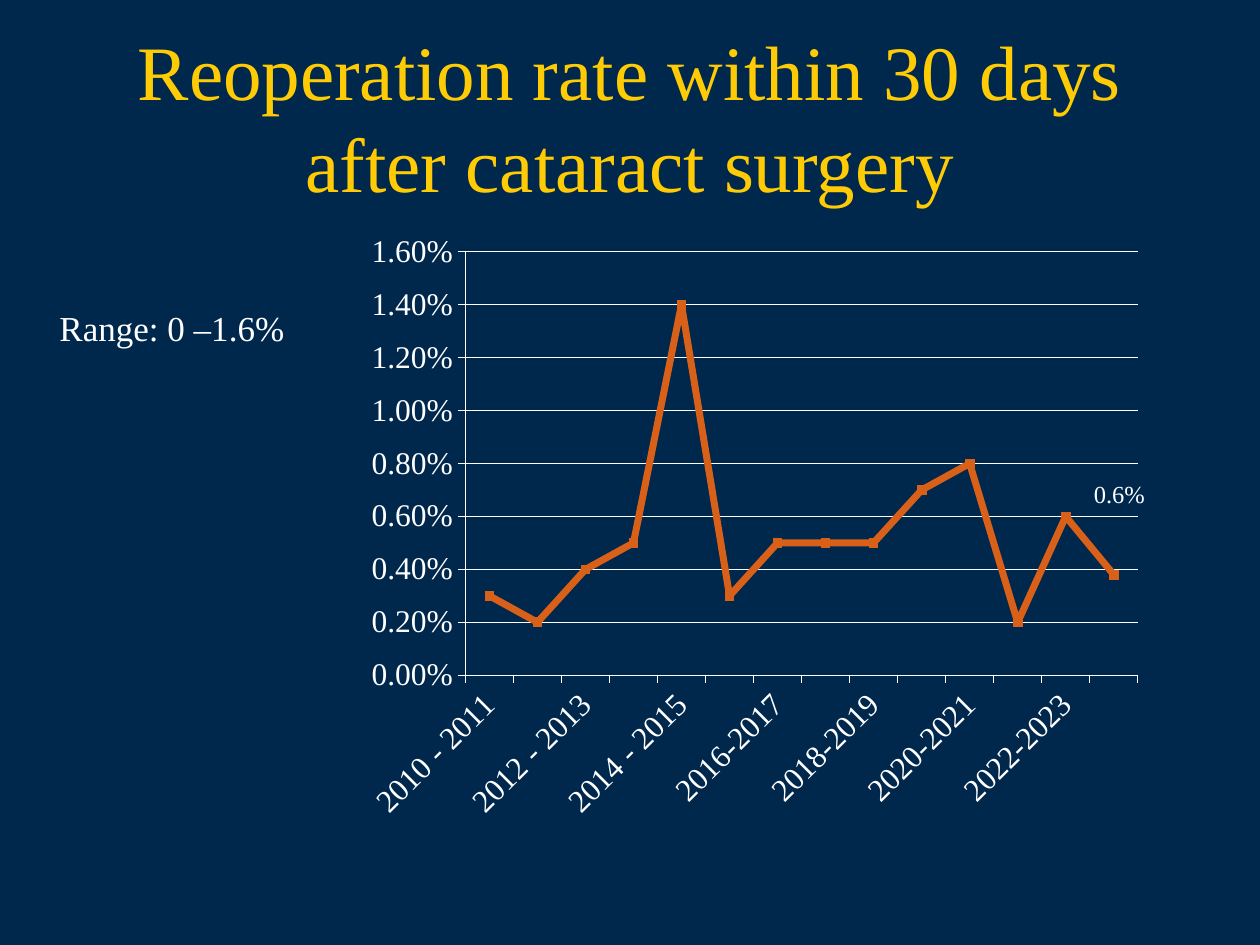
from lxml import etree
from pptx import Presentation
from pptx import util as u
from pptx.chart.data import CategoryChartData
from pptx.dml.color import RGBColor
from pptx.enum import chart as ch, text
from pptx.oxml.ns import qn

TITLE = "Reoperation rate within 30 days after cataract surgery"
RANGE_NOTE = "Range: 0 –1.6%"
RATE_LABEL = "0.6%"
RATES = {
    "2010 - 2011": 0.003, "2011 - 2012": 0.002, "2012 - 2013": 0.004,
    "2013 - 2014": 0.005, "2014 - 2015": 0.014, "2015-2016": 0.003,
    "2016-2017": 0.005, "2017-2018": 0.005, "2018-2019": 0.005,
    "2019-2020": 0.007, "2020-2021": 0.008, "2021-2022": 0.002,
    "2022-2023": 0.006, "2023-2024": 0.0038,
}
PLOT = {"x": 0.122, "y": 0.051, "w": 0.843, "h": 0.696}
COLOURS = {"navy": "00274C", "maize": "FFCB05", "white": "FFFFFF", "orange": "D86018"}
FONT = "Times New Roman"


def colour(name):
    return RGBColor.from_string(COLOURS[name])


def style(font, size, name="white"):
    font.name, font.size, font.bold = FONT, u.Pt(size), False
    font.color.rgb = colour(name)


def place(shape, left, top, width, height):
    shape.left, shape.top = u.Cm(left), u.Cm(top)
    shape.width, shape.height = u.Cm(width), u.Cm(height)


def write(shape, words, size, name="white", align=text.PP_ALIGN.LEFT,
          anchor=text.MSO_ANCHOR.TOP, wrap=True):
    frame = shape.text_frame
    frame.word_wrap, frame.vertical_anchor = wrap, anchor
    frame.auto_size = text.MSO_AUTO_SIZE.NONE
    paragraph = frame.paragraphs[0]
    paragraph.alignment = align
    run = paragraph.add_run()
    run.text = words
    style(run.font, size, name)
    return paragraph


def fix_plot_area(chart):
    """Pin the inner plot area to the fractions in PLOT."""
    area = chart.element.find(".//" + qn("c:plotArea"))
    for old in area.findall(qn("c:layout")):
        area.remove(old)
    layout = etree.Element(qn("c:layout"))
    manual = etree.SubElement(layout, qn("c:manualLayout"))
    settings = {"layoutTarget": "inner", "xMode": "edge", "yMode": "edge", **PLOT}
    for tag, value in settings.items():
        etree.SubElement(manual, qn("c:" + tag)).set("val", str(value))
    area.insert(0, layout)


def add_rate_chart(slide):
    data = CategoryChartData(number_format="0.00%")
    data.categories = list(RATES)
    data.add_series("Series 1", list(RATES.values()))
    chart = slide.shapes.add_chart(
        ch.XL_CHART_TYPE.LINE_MARKERS, u.Cm(7.42), u.Cm(4.45),
        u.Cm(16.08), u.Cm(12.27), data).chart
    chart.has_legend = chart.has_title = False
    style(chart.font, 18)
    fix_plot_area(chart)

    years, rate = chart.category_axis, chart.value_axis
    for axis in (years, rate):
        axis.major_tick_mark = ch.XL_TICK_MARK.OUTSIDE
        axis.minor_tick_mark = ch.XL_TICK_MARK.NONE
        style(axis.tick_labels.font, 18)
        axis.format.line.color.rgb = colour("white")
        axis.format.line.width = u.Pt(0.75)
    rate.minimum_scale, rate.maximum_scale, rate.major_unit = 0, 0.016, 0.002
    rate.tick_labels.number_format = "0.00%"
    rate.tick_labels.number_format_is_linked = False
    rate.has_major_gridlines = True
    rate.major_gridlines.format.line.color.rgb = colour("white")
    rate.major_gridlines.format.line.width = u.Pt(0.75)
    years_body = years._element.find(qn("c:txPr")).find(qn("a:bodyPr"))
    years_body.set("rot", str(-45 * 60000))

    chart.plots[0].vary_by_categories = False
    series = chart.plots[0].series[0]
    series.smooth = False
    series.format.line.color.rgb = colour("orange")
    series.format.line.width = u.Pt(4)
    series.marker.style = ch.XL_MARKER_STYLE.SQUARE
    series.marker.size = 5
    series.marker.format.fill.solid()
    series.marker.format.fill.fore_color.rgb = colour("orange")
    series.marker.format.line.color.rgb = colour("orange")


def main():
    deck = Presentation()
    deck.slide_width, deck.slide_height = u.Cm(25.4), u.Cm(19.05)
    slide = deck.slides.add_slide(deck.slide_layouts[5])
    slide.background.fill.solid()
    slide.background.fill.fore_color.rgb = colour("navy")

    title = slide.shapes.title
    place(title, 1.9, 0.64, 21.6, 3.38)
    write(title, TITLE, 44, "maize", text.PP_ALIGN.CENTER, text.MSO_ANCHOR.MIDDLE)

    note = slide.shapes.add_textbox(u.Cm(0.64), u.Cm(6.15), u.Cm(10.59), u.Cm(3.81))
    note.text_frame.margin_left = u.Cm(0.56)
    paragraph = write(note, RANGE_NOTE, 20)
    paragraph.line_spacing, paragraph.space_before = 0.9, u.Pt(4)

    add_rate_chart(slide)

    label = slide.shapes.add_textbox(u.Cm(21.8), u.Cm(9.53), u.Cm(1.9), u.Cm(0.86))
    write(label, RATE_LABEL, 14)
    deck.save("out.pptx")


if __name__ == "__main__":
    main()
